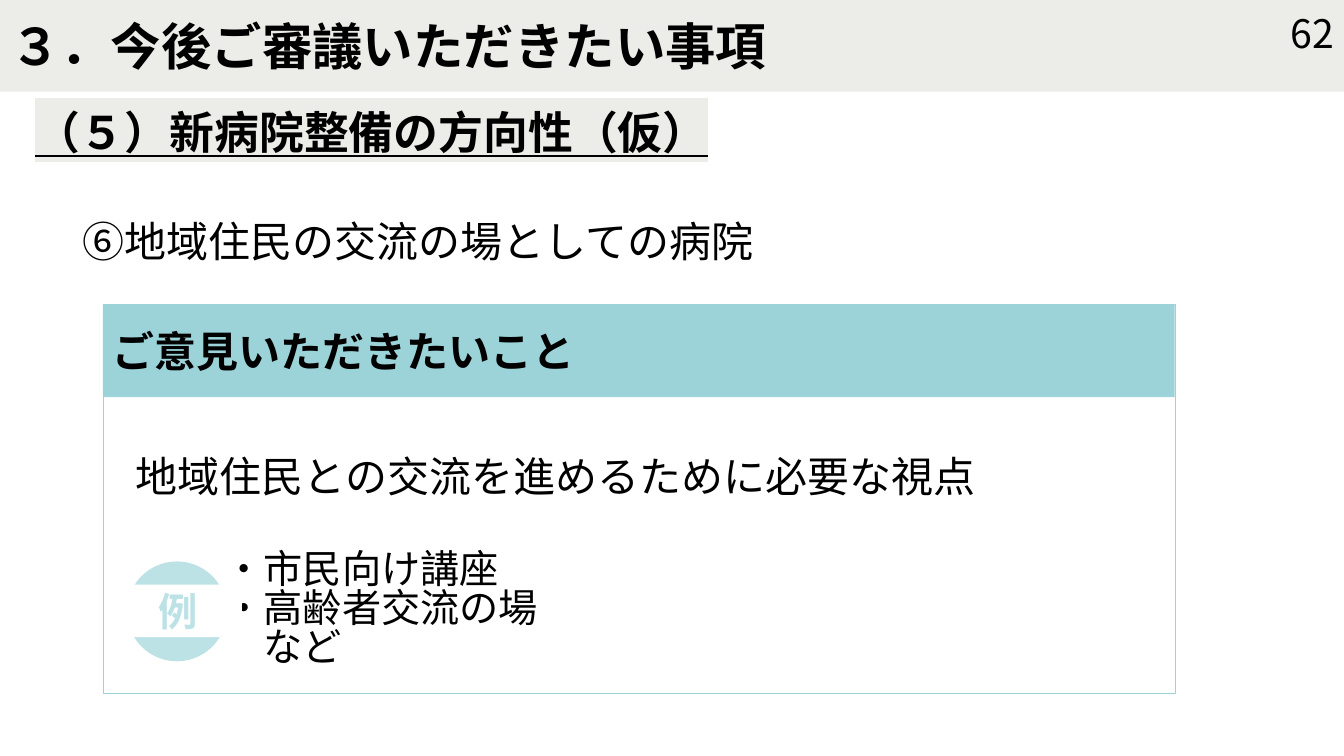
from lxml import etree
from pptx import Presentation
from pptx import util as u
from pptx.dml.color import RGBColor
from pptx.enum import shapes, text
from pptx.oxml.ns import qn

SANS, MONO = "Noto Sans CJK JP", "Noto Sans Mono"
BLACK, WHITE, GREY = "000000", "FFFFFF", "ECEDE8"
TEAL, PALE = "9BD3D9", "BCE2E6"
LEFT, MID, RIGHT = text.PP_ALIGN.LEFT, text.PP_ALIGN.CENTER, text.PP_ALIGN.RIGHT
RECT, OVAL = shapes.MSO_SHAPE.RECTANGLE, shapes.MSO_SHAPE.OVAL


def color(code):
    return RGBColor.from_string(code)


def inches(*sizes):
    return [u.Inches(size) for size in sizes]


def paint(shape, fill):
    shape.fill.solid()
    shape.fill.fore_color.rgb = color(fill)


def mark(run, code):
    """Highlight a run; the element goes right before the latin font."""
    glow = etree.Element(qn("a:highlight"))
    etree.SubElement(glow, qn("a:srgbClr"), val=code)
    run.font._element.find(qn("a:latin")).addprevious(glow)


def write(shape, *lines, size=30, bold=False, line=False, hue=BLACK, font=SANS,
          align=LEFT, middle=True, pitch=None, light=None):
    frame = shape.text_frame
    frame.word_wrap = True
    frame.auto_size = text.MSO_AUTO_SIZE.NONE
    frame.vertical_anchor = text.MSO_ANCHOR.MIDDLE if middle else text.MSO_ANCHOR.TOP
    for i, words in enumerate(lines):
        para = frame.add_paragraph() if i else frame.paragraphs[0]
        para.alignment = align
        if pitch:
            para.line_spacing = pitch
        run = para.add_run()
        run.text = words
        run.font.size, run.font.bold = u.Pt(size), bold
        run.font.name = font
        run.font.color.rgb = color(hue)
        if line:
            run.font.underline = True
        # East Asian glyphs need their own font entry
        latin = run.font._element.find(qn("a:latin"))
        latin.addnext(etree.Element(qn("a:ea"), typeface=font))
        if light:
            mark(run, light)


def label(slide, at, *lines, **form):
    write(slide.shapes.add_textbox(*inches(*at)), *lines, **form)


def block(group, kind, at, fill=None, edge=None):
    shape = group.add_shape(kind, *inches(*at))
    shape.shadow.inherit = False
    if fill:
        paint(shape, fill)
    else:
        shape.fill.background()
    if edge:
        shape.line.color.rgb = color(edge)
        shape.line.width = u.Pt(1)
    else:
        shape.line.fill.background()
    return shape


def main():
    deck = Presentation()
    deck.slide_width, deck.slide_height = inches(13.33, 7.5)
    slide = deck.slides.add_slide(deck.slide_layouts[5])

    # Title band and page number
    title = slide.shapes.title
    title.left, title.top, title.width, title.height = inches(0, 0, 13.33, 0.91)
    paint(title, GREY)
    write(title, "３．今後ご審議いただきたい事項", size=36, bold=True)
    label(slide, (10.08, 0.13, 3.25, 0.4), "62", size=28, align=RIGHT)

    # Section headings
    label(slide, (0.25, 0.99, 12.83, 0.64), "（５）新病院整備の方向性（仮）",
          size=32, bold=True, line=True, middle=False, light=GREY)
    label(slide, (0.72, 2.09, 11.57, 0.61), "⑥地域住民の交流の場としての病院",
          middle=False)

    # Opinion panel
    label(slide, (1.25, 4.21, 11.32, 1.01), "地域住民との交流を進めるために必要な視点")
    label(slide, (2.13, 5.47, 10.84, 1.17), "・市民向け講座", "・高齢者交流の場",
          "　など", size=28, pitch=0.83)
    head = block(slide.shapes, RECT, (1.02, 3.02, 10.63, 0.92), fill=TEAL)
    write(head, "ご意見いただきたいこと", bold=True)
    block(slide.shapes, RECT, (1.03, 3.02, 10.63, 3.86), edge=TEAL)

    # Example badge
    badge = slide.shapes.add_group_shape().shapes
    block(badge, OVAL, (1.26, 5.57, 0.99, 0.99), fill=PALE)
    strip = block(badge, RECT, (1.14, 5.8, 1.26, 0.52), fill=WHITE)
    write(strip, "例", size=28, bold=True, hue=PALE, font=MONO, align=MID)

    deck.save("out.pptx")


if __name__ == "__main__":
    main()
